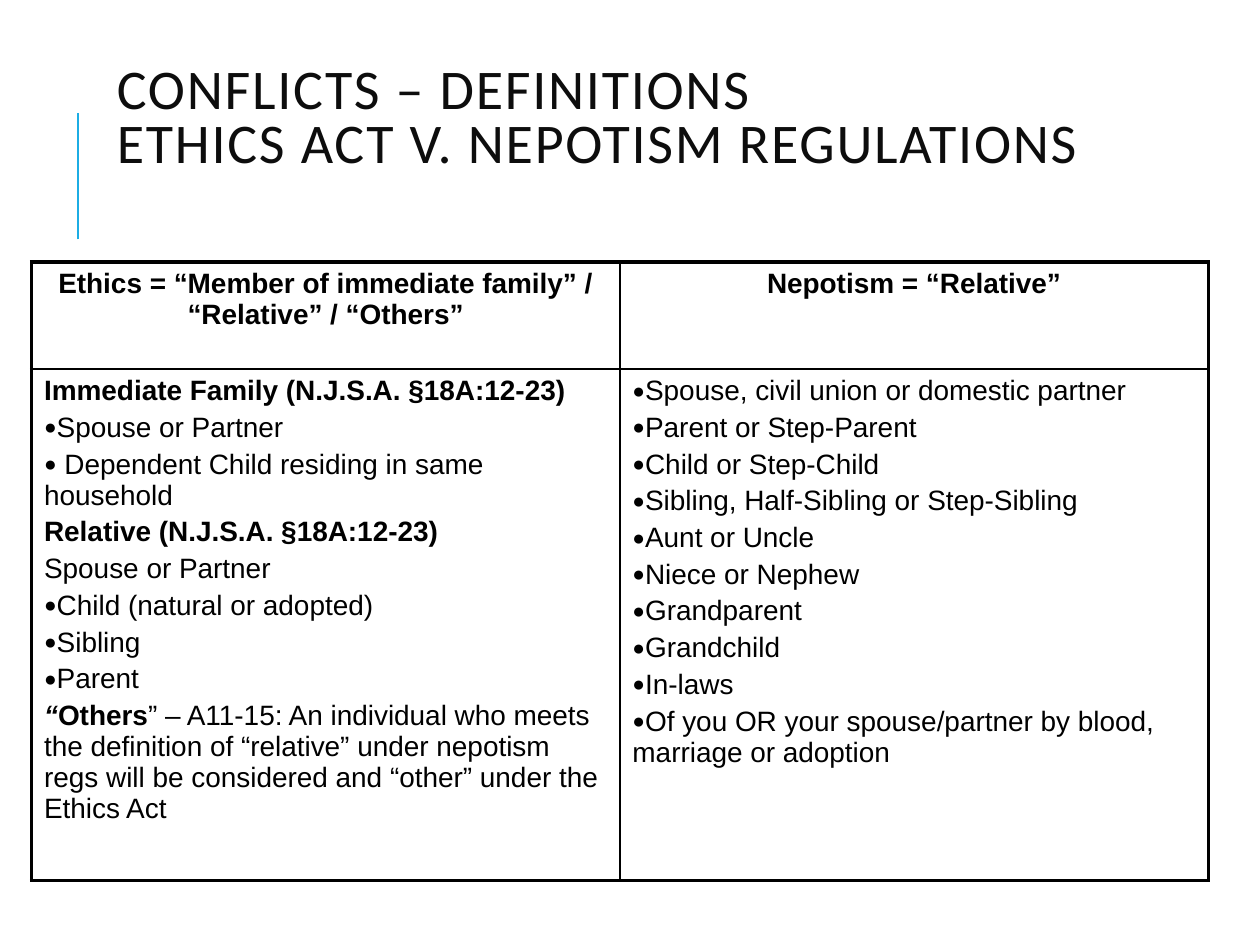
from pptx import Presentation
from pptx.dml.color import RGBColor
from pptx.enum.shapes import MSO_CONNECTOR
from pptx.enum.text import MSO_ANCHOR, PP_ALIGN
from pptx.oxml import parse_xml
from pptx.oxml.ns import nsdecls
from pptx.util import Inches, Pt
from lxml import etree

BLACK = RGBColor(0x00, 0x00, 0x00)
INK = RGBColor(0x0D, 0x0D, 0x0D)
BLUE = RGBColor(0x1C, 0xAD, 0xE4)
THICK, THIN = Pt(2.25), Pt(1)


def add_line(para, parts, bullet=False):
    """Fill a paragraph with (text, bold, italic) parts."""
    para.space_before = Pt(3.2)
    for text, bold, italic in parts:
        run = para.add_run()
        run.text = text
        font = run.font
        font.name, font.size = "Arial", Pt(16)
        font.bold, font.italic = bold, italic
        font.color.rgb = BLACK
    if bullet:
        props = para._p.get_or_add_pPr()
        props.set("marL", "0")
        props.set("indent", "0")
        for xml in (
            f'<a:buClr {nsdecls("a")}><a:srgbClr val="{BLACK}"/></a:buClr>',
            f'<a:buSzPct {nsdecls("a")} val="75000"/>',
            f'<a:buFont {nsdecls("a")} typeface="Arial"/>',
            f'<a:buChar {nsdecls("a")} char="●"/>',
        ):
            props.append(parse_xml(xml))


def set_edge(cell, side, width):
    """Draw one black border of a cell."""
    cell._tc.get_or_add_tcPr().append(parse_xml(
        f'<a:ln{side} {nsdecls("a")} w="{width}"><a:solidFill>'
        f'<a:srgbClr val="{BLACK}"/></a:solidFill></a:ln{side}>'))


prs = Presentation()
prs.slide_width, prs.slide_height = Inches(10), Inches(7.5)
slide = prs.slides.add_slide(prs.slide_layouts[6])

# Accent line beside the title
accent = slide.shapes.add_connector(
    MSO_CONNECTOR.STRAIGHT, Inches(0.62), Inches(1.9), Inches(0.62), Inches(0.9))
accent.line.color.rgb = BLUE
accent.line.width = Pt(1.5)
etree.SubElement(accent._element.spPr,
                 "{http://schemas.openxmlformats.org/drawingml/2006/main}effectLst")

# Title
title = slide.shapes.add_textbox(
    Inches(0.83), Inches(0.33), Inches(8.33), Inches(1.25))
frame = title.text_frame
frame.word_wrap = True
frame.vertical_anchor = MSO_ANCHOR.MIDDLE
head = frame.paragraphs[0]
head.text = "CONFLICTS – DEFINITIONS\vETHICS ACT V. NEPOTISM REGULATIONS"
head.line_spacing = 0.8
for run in head.runs:
    run.font.name, run.font.size = "Calibri", Pt(32)
    run.font.color.rgb = INK
    run._r.get_or_add_rPr().set("spc", "100")

# Table
table = slide.shapes.add_table(
    2, 2, Inches(0.25), Inches(2.08), Inches(9.33), Inches(4.91)).table
table.first_row = table.horz_banding = False
for col in table.columns:
    col.width = Inches(4.67)
table.rows[0].height = Inches(0.85)
table.rows[1].height = Inches(4.06)

# Thick outer frame, thin inner rules
for r in range(2):
    for c in range(2):
        cell = table.cell(r, c)
        set_edge(cell, "L", THIN if c else THICK)
        set_edge(cell, "R", THICK if c else THIN)
        set_edge(cell, "T", THIN if r else THICK)
        set_edge(cell, "B", THICK if r else THIN)
        cell.fill.background()

# Column heads
heads = ["Ethics = “Member of immediate family” / “Relative” / “Others”",
         "Nepotism = “Relative”"]
for c, text in enumerate(heads):
    para = table.cell(0, c).text_frame.paragraphs[0]
    para.alignment = PP_ALIGN.CENTER
    add_line(para, [(text, True, False)])

# Body: (text, bold, bullet)
ethics = [
    ("Immediate Family (N.J.S.A. §18A:12-23)", True, False),
    ("Spouse or Partner", False, True),
    (" Dependent Child residing in same household", False, True),
    ("Relative (N.J.S.A. §18A:12-23)", True, False),
    ("Spouse or Partner", False, False),
    ("Child (natural or adopted)", False, True),
    ("Sibling", False, True),
    ("Parent", False, True),
]
kin = ["Spouse, civil union or domestic partner", "Parent or Step-Parent",
       "Child or Step-Child", "Sibling, Half-Sibling or Step-Sibling",
       "Aunt or Uncle", "Niece or Nephew", "Grandparent", "Grandchild",
       "In-laws",
       "Of you OR your spouse/partner by blood, marriage or adoption"]
nepotism = [(text, False, True) for text in kin]
for c, items in enumerate([ethics, nepotism]):
    frame = table.cell(1, c).text_frame
    for i, (text, bold, bullet) in enumerate(items):
        para = frame.add_paragraph() if i else frame.paragraphs[0]
        add_line(para, [(text, bold, False)], bullet)

# Closing note on "others"
add_line(table.cell(1, 0).text_frame.add_paragraph(), [
    ("“", True, True),
    ("Others", True, False),
    ("” – A11-15: An individual who meets the definition of “relative” under "
     "nepotism regs will be considered and “other” under the Ethics Act",
     False, False),
])

prs.save("out.pptx")
